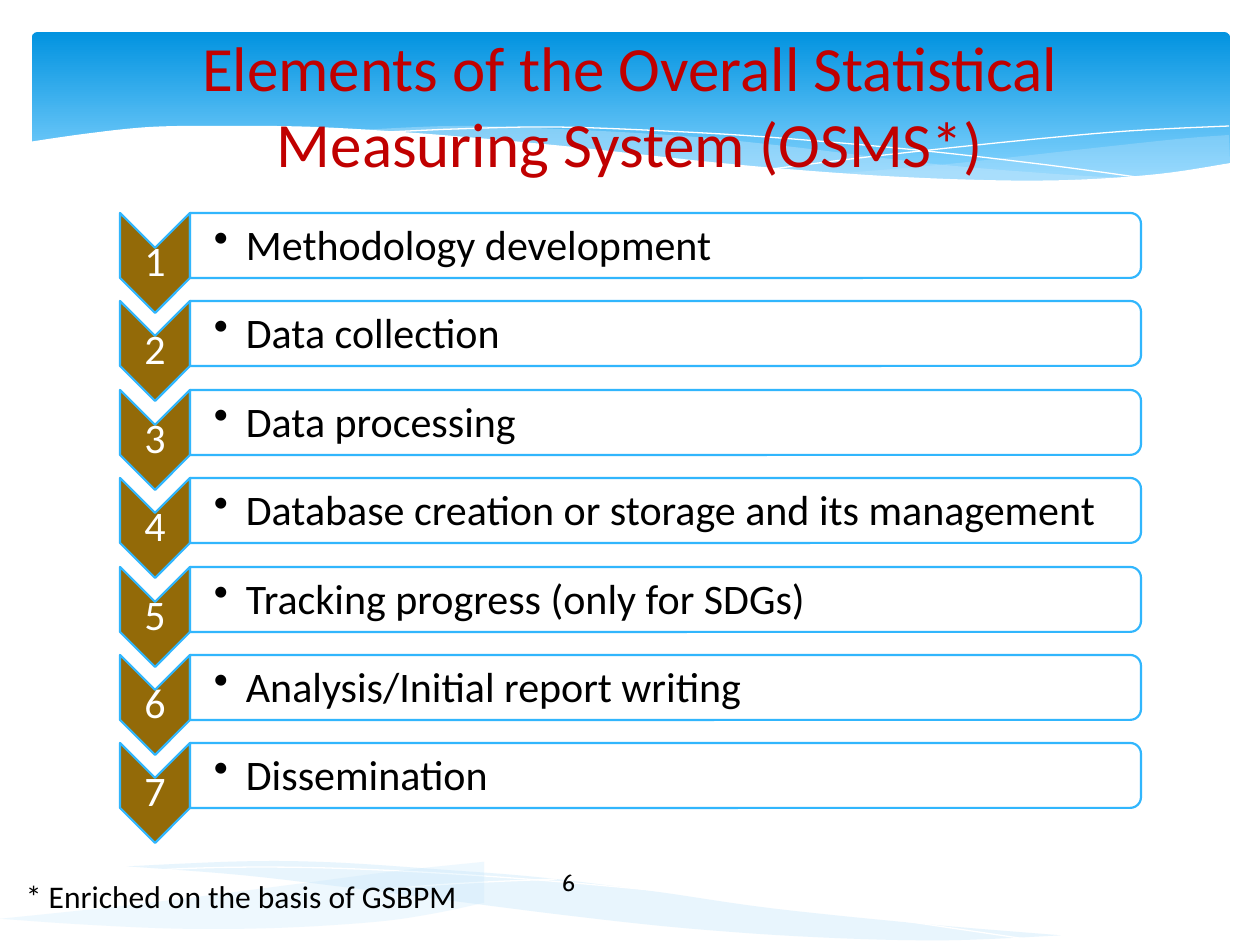
from dataclasses import dataclass

from lxml.etree import SubElement
from pptx import Presentation
from pptx.dml.color import RGBColor
from pptx.enum.shapes import MSO_SHAPE as Preset
from pptx.enum.text import MSO_ANCHOR as Anchor, PP_ALIGN as Align
from pptx.oxml.ns import qn
from pptx.util import Pt

SCALE = 914400 / 126  # EMU in one px


@dataclass(frozen=True)
class Theme:
    sky_top: str = "0293E0"
    sky_bottom: str = "83D3FE"
    wave: str = "C6E7FC"
    white: str = "FFFFFF"
    black: str = "000000"
    chevron: str = "936A08"
    outline: str = "31B6FD"
    title: str = "C00000"
    font: str = "Calibri"
    page_font: str = "Cabin"
    title_size: float = 36
    step_size: float = 24
    note_size: float = 18
    page_size: float = 13.5


THEME = Theme()

STEPS = [
    "Methodology development",
    "Data collection",
    "Data processing",
    "Database creation or storage and its management",
    "Tracking progress (only for SDGs)",
    "Analysis/Initial report writing",
    "Dissemination",
]
STEP_PITCH = 88.4

# Header waves: each curve is a list of points that it passes through
RIGHT_UPPER = [(1229, 135), (1178, 139), (1085, 149), (949, 164), (833, 174)]
RIGHT_LOWER = [(833, 174), (922, 179), (1012, 181), (1087, 180), (1160, 174),
               (1230, 163)]
MIDDLE_UPPER = [(1125, 178), (1055, 174), (934, 164), (793, 147), (682, 136),
                (557, 129), (455, 126), (360, 130)]
MIDDLE_LOWER = [(360, 130), (483, 139), (566, 147), (713, 164), (838, 174),
                (942, 180), (1031, 181), (1125, 178)]
HEADER_STROKES = [
    [(389, 132), (457, 129), (546, 127), (643, 130), (766, 137), (916, 150),
     (1047, 165), (1143, 178)],
    [(772, 169), (876, 156), (1016, 141), (1128, 131), (1229, 126)],
]
HEADER_EDGE = [(1231, 163), (1159, 174), (1071, 180), (980, 180), (867, 175),
               (730, 164), (563, 146), (428, 134), (315, 127), (223, 126),
               (150, 127), (84, 134), (29, 142)]
HEADER_BASE = [(29, 212), (1231, 212)]

# Footer waves, drawn turned by 180 degrees
LONG_LOWER = [(127, 866), (260, 877), (416, 893), (534, 910), (648, 924),
              (750, 932), (856, 939), (945, 940), (1061, 935)]
LONG_UPPER = [(1061, 935), (944, 926), (810, 910), (630, 887), (501, 873),
              (369, 864), (243, 861), (127, 866)]
FOOTER_STROKES = [
    [(1026, 931), (959, 937), (861, 939), (750, 936), (606, 927), (432, 911),
     (278, 892), (106, 867)],
    [(557, 879), (432, 897), (261, 920), (123, 934), (1, 940)],
]
SHORT_LOWER = [(0, 929), (86, 920), (178, 908), (343, 887), (484, 872)]
SHORT_UPPER = [(484, 872), (396, 866), (300, 862), (203, 863), (108, 869),
               (52, 877), (0, 888)]


def px(length):
    return round(length * SCALE)


def rgb(color):
    return RGBColor.from_string(color)


def paint(shape, fill=None, opacity=100, line=None, weight=0):
    shape.shadow.inherit = False
    if fill:
        shape.fill.solid()
        shape.fill.fore_color.rgb = rgb(fill)
        if opacity < 100:
            color = shape.fill._xPr.find(qn("a:solidFill"))[0]
            SubElement(color, qn("a:alpha"), val=str(opacity * 1000))
    else:
        shape.fill.background()
    if line:
        shape.line.color.rgb = rgb(line)
        shape.line.width = Pt(weight)
    else:
        shape.line.fill.background()


def smooth(knots, pieces=6):
    """Points of a Catmull-Rom curve through the knots."""
    padded = [knots[0], *knots, knots[-1]]
    points = [knots[0]]
    for a, b, c, d in zip(padded, padded[1:], padded[2:], padded[3:]):
        for t in (n / pieces for n in range(1, pieces + 1)):
            points.append(tuple(
                (2 * q + (r - p) * t + (2 * p - 5 * q + 4 * r - s) * t ** 2
                 + (3 * q - p - 3 * r + s) * t ** 3) / 2
                for p, q, r, s in zip(a, b, c, d)))
    return points


def add_curve(slide, *curves, closed=True, turn=0, **look):
    start, *rest = [(px(x), px(y)) for curve in curves for x, y in curve]
    builder = slide.shapes.build_freeform(*start)
    builder.add_line_segments(rest, close=closed)
    wave = builder.convert_to_shape()
    wave.rotation = turn
    paint(wave, **look)


def add_preset(slide, preset, left, top, width, height, turn=0, **look):
    shape = slide.shapes.add_shape(preset, *map(px, (left, top, width, height)))
    shape.rotation = turn
    paint(shape, **look)
    return shape


def add_text(slide, text, box, size, color=THEME.black, font=THEME.font,
             align=Align.LEFT, anchor=Anchor.TOP, insets=(13, 6, 13, 6),
             spacing=1.0, bullet_indent=0):
    frame = slide.shapes.add_textbox(*map(px, box)).text_frame
    frame.word_wrap = True
    frame.vertical_anchor = anchor
    (frame.margin_left, frame.margin_top,
     frame.margin_right, frame.margin_bottom) = map(px, insets)
    paragraph = frame.paragraphs[0]
    if bullet_indent:
        props = paragraph._p.get_or_add_pPr()
        props.set("marL", str(px(bullet_indent)))
        props.set("indent", str(-px(bullet_indent)))
        SubElement(props, qn("a:buChar"), char="•")
    paragraph.alignment = align
    paragraph.line_spacing = spacing
    run = paragraph.add_run()
    run.text = text
    run.font.name = font
    run.font.size = Pt(size)
    run.font.color.rgb = rgb(color)


def add_header(slide):
    sky = add_preset(slide, Preset.ROUNDED_RECTANGLE, 32, 32, 1198, 160)
    sky.adjustments[0] = 0.034
    sky.fill.gradient()
    sky.fill.gradient_angle = 270
    stops = ((0, THEME.sky_top), (0.9, THEME.sky_bottom))
    for stop, (position, color) in zip(sky.fill.gradient_stops, stops):
        stop.position = position
        stop.color.rgb = rgb(color)
    add_curve(slide, smooth(RIGHT_UPPER), smooth(RIGHT_LOWER),
              fill=THEME.wave, opacity=29)
    add_curve(slide, smooth(MIDDLE_UPPER), smooth(MIDDLE_LOWER),
              fill=THEME.wave, opacity=40)
    for stroke in HEADER_STROKES:
        add_curve(slide, smooth(stroke), closed=False, line=THEME.white)
    add_curve(slide, smooth(HEADER_EDGE), HEADER_BASE, fill=THEME.white)


def add_footer(slide):
    add_curve(slide, smooth(LONG_LOWER), smooth(LONG_UPPER), turn=180,
              fill=THEME.wave, opacity=40)
    for stroke in FOOTER_STROKES:
        add_curve(slide, smooth(stroke), closed=False, turn=180, line=THEME.white)
    add_curve(slide, smooth(SHORT_LOWER), smooth(SHORT_UPPER), turn=180,
              fill=THEME.wave, opacity=29)


def add_step(slide, number, label, top):
    edge = dict(turn=90, line=THEME.outline, weight=1.25)
    add_preset(slide, Preset.CHEVRON, 105, top + 15, 100, 70,
               fill=THEME.chevron, **edge)
    add_text(slide, str(number), (120, top + 35, 70, 30), THEME.step_size,
             color=THEME.white, align=Align.CENTER, anchor=Anchor.MIDDLE,
             insets=(2, 2, 2, 2), spacing=0.9)
    add_preset(slide, Preset.ROUND_2_SAME_RECTANGLE, 633, top - 443, 65, 951,
               fill=THEME.white, opacity=90, **edge)
    add_text(slide, label, (190, top + 4, 948, 59), THEME.step_size,
             anchor=Anchor.MIDDLE, insets=(24, 2, 2, 2), spacing=0.9,
             bullet_indent=32)


def main():
    deck = Presentation()
    deck.slide_width, deck.slide_height = px(1260), px(945)
    slide = deck.slides.add_slide(deck.slide_layouts[6])

    # Background waves
    add_header(slide)
    add_footer(slide)

    # Numbered steps
    for index, label in enumerate(STEPS):
        add_step(slide, index + 1, label, 213 + round(index * STEP_PITCH))

    # Page number, title and footnote
    add_text(slide, "6", (549, 862, 160, 50), THEME.page_size,
             font=THEME.page_font)
    add_text(slide, "Elements of the Overall Statistical Measuring System (OSMS*)",
             (63, 22, 1134, 165), THEME.title_size, color=THEME.title,
             align=Align.CENTER, anchor=Anchor.MIDDLE)
    add_text(slide, "* Enriched on the basis of GSBPM", (13, 871, 544, 50),
             THEME.note_size)

    deck.save("out.pptx")


if __name__ == "__main__":
    main()
